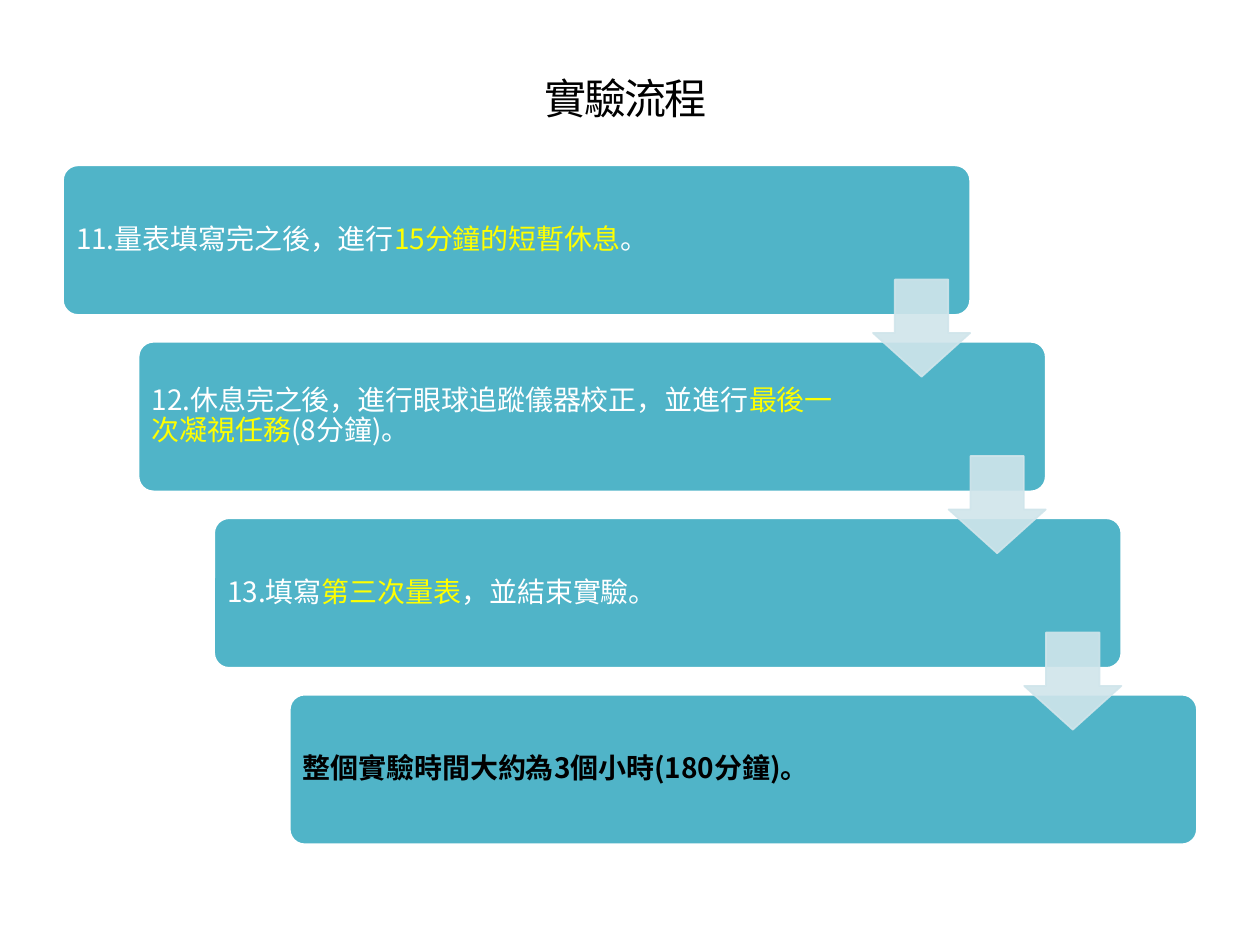
from lxml import etree
from pptx import Presentation
from pptx.dml.color import RGBColor
from pptx.enum.shapes import MSO_SHAPE
from pptx.enum.text import MSO_ANCHOR, PP_ALIGN
from pptx.oxml.ns import qn
from pptx.util import Pt

ROUNDED = MSO_SHAPE.ROUNDED_RECTANGLE
DOWN_ARROW = MSO_SHAPE.DOWN_ARROW
TOP, MIDDLE = MSO_ANCHOR.TOP, MSO_ANCHOR.MIDDLE
LEFT, CENTER = PP_ALIGN.LEFT, PP_ALIGN.CENTER

FONT = "Noto Sans CJK SC"
COLORS = {
    "step": "50B4C8",
    "arrow": "D0E5EB",
    "white": "FFFFFF",
    "accent": "FFFF00",
    "black": "000000",
}
STEPS = [
    [("11.量表填寫完之後，進行", "white"), ("15分鐘的短暫休息", "accent"), ("。", "white")],
    [("12.休息完之後，進行眼球追蹤儀器校正，並進行", "white"),
     ("最後一次凝視任務", "accent"), ("(8分鐘)。", "white")],
    [("13.填寫", "white"), ("第三次量表", "accent"), ("，並結束實驗。", "white")],
    [("整個實驗時間大約為3個小時(180分鐘)。", "black")],
]


def color(name):
    return RGBColor.from_string(COLORS[name])


def add_text(page, box, spans, size=16, bold=False, align=LEFT, anchor=MIDDLE,
             inset=5, spacing=None):
    frame = page.shapes.add_textbox(*map(Pt, box)).text_frame
    frame.word_wrap = True
    frame.vertical_anchor = anchor
    frame.margin_left = frame.margin_right = Pt(inset)
    frame.margin_top = frame.margin_bottom = Pt(min(inset, 5))
    para = frame.paragraphs[0]
    para.alignment = align
    para.line_spacing = 0.9
    for text, shade in spans:
        span = para.add_run()
        span.text = text
        span.font.size = Pt(size)
        span.font.bold = bold
        span.font.name = FONT
        span.font.color.rgb = color(shade)
        properties = span.font._element
        etree.SubElement(properties, qn("a:ea"), typeface=FONT)
        if spacing is not None:
            properties.set("spc", str(round(spacing * 100)))


def add_panel(page, kind, box, adjustments, fill, line, alpha=None):
    shape = page.shapes.add_shape(kind, *map(Pt, box))
    shape.shadow.inherit = False
    for index, value in enumerate(adjustments):
        shape.adjustments[index] = value
    shape.fill.solid()
    shape.fill.fore_color.rgb = color(fill)
    shape.line.color.rgb = color(line)
    shape.line.width = Pt(1)
    if alpha is not None:
        for tint in shape._element.spPr.iter(qn("a:srgbClr")):
            etree.SubElement(tint, qn("a:alpha"), val=str(alpha * 1000))


def add_title(page, box):
    add_text(page, box, [("實驗流程", "black")], size=24, align=CENTER,
             anchor=TOP, inset=7.2, spacing=-1.2)


def add_step(page, box, spans, bold):
    left, top, width, height = box
    add_panel(page, ROUNDED, box, [0.1], "step", "white")
    text_box = (left + 2.5, top + 2.5, width - 103.4, height - 5)
    add_text(page, text_box, spans, bold=bold)


def add_arrow(page, box):
    left, top, width, height = box
    side = 55.5
    arrow_box = (left + width - side, top + height - 20.2, side, side)
    add_panel(page, DOWN_ARROW, arrow_box, [0.55, 0.45], "arrow", "arrow", alpha=90)


def add_staircase(page, box):
    left, top, width, height = box
    step_width, step_height = 518.4, 85.5
    last = len(STEPS) - 1
    shift = (width - step_width) / last
    drop = (height - step_height) / last
    boxes = [(left + index * shift, top + index * drop, step_width, step_height)
             for index in range(len(STEPS))]
    for index, (step_box, spans) in enumerate(zip(boxes, STEPS)):
        add_step(page, step_box, spans, bold=index == last)
    for step_box in boxes[:-1]:
        add_arrow(page, step_box)


def main():
    deck = Presentation()
    deck.slide_width, deck.slide_height = Pt(720), Pt(540)
    page = deck.slides.add_slide(deck.slide_layouts[6])
    add_staircase(page, (36, 94.5, 648, 388))
    add_title(page, (39, 39.6, 636.5, 130.3))
    deck.save("out.pptx")


if __name__ == "__main__":
    main()
